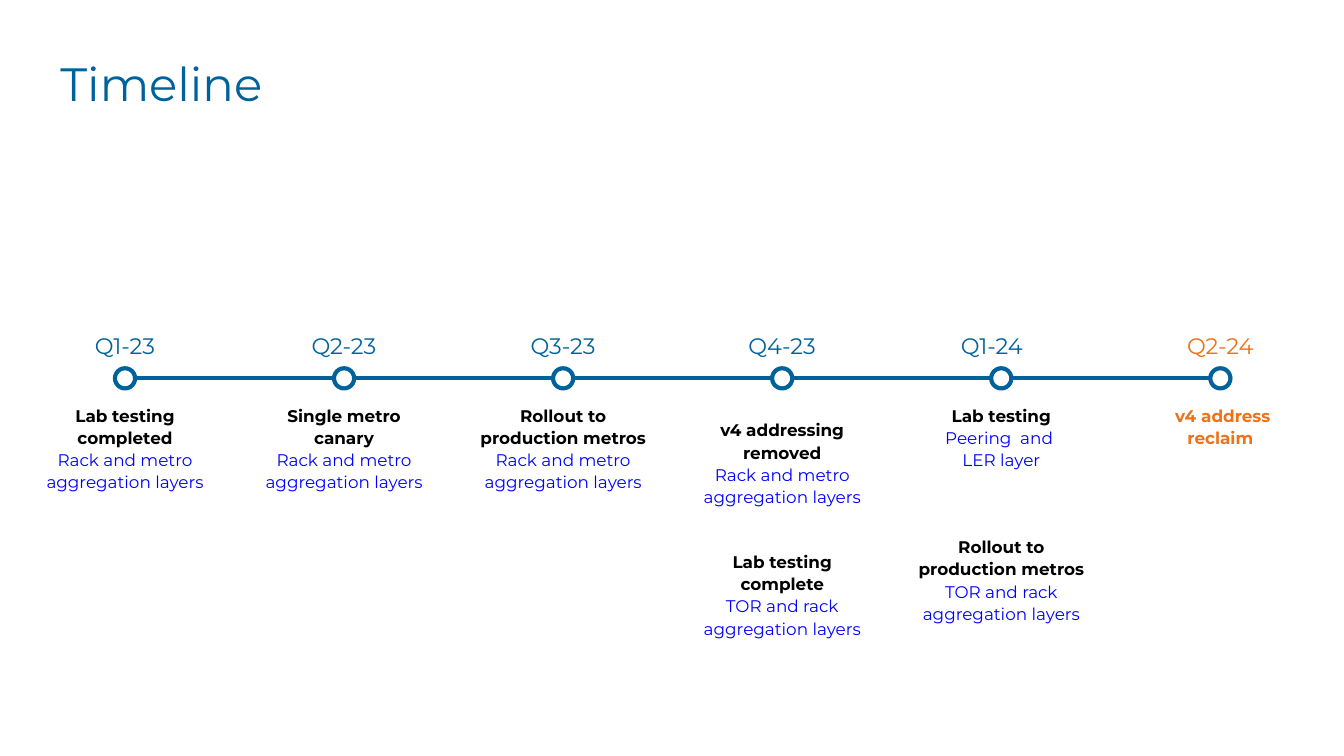
from lxml import etree
from pptx import Presentation
from pptx import util as u
from pptx.dml.color import RGBColor
from pptx.enum import shapes, text
from pptx.oxml.ns import qn

COLORS = {
    "blue": "00629A",
    "orange": "ED7218",
    "black": "000000",
    "link": "0000FF",
    "white": "FFFFFF",
}
SLIDE_WIDTH = 10
SLIDE_HEIGHT = SLIDE_WIDTH * 9 / 16
FIRST_CENTER, STEP = 0.93, 1.63
DOT_SIZE, DOT_TOP = 0.15, 2.74
AXIS_Y = DOT_TOP + DOT_SIZE / 2
DETAIL_TOP = 3
RACK_METRO = ["Rack and metro aggregation layers"]
TOR_RACK = ["TOR and rack aggregation layers"]

# Quarter, label shift, color, then entries of (top, heading, detail lines)
QUARTERS = [
    ("Q1-23", 0, "blue", [(DETAIL_TOP, "Lab testing completed", RACK_METRO)]),
    ("Q2-23", 0, "blue", [(DETAIL_TOP, "Single metro canary", RACK_METRO)]),
    ("Q3-23", 0, "blue", [(DETAIL_TOP, "Rollout to production metros", RACK_METRO)]),
    ("Q4-23", 0, "blue", [(3.11, "v4 addressing removed", RACK_METRO),
                          (4.09, "Lab testing complete", TOR_RACK)]),
    ("Q1-24", -0.07, "blue", [(DETAIL_TOP, "Lab testing", ["Peering  and ", "LER layer"]),
                              (3.98, "Rollout to production metros", TOR_RACK)]),
    ("Q2-24", 0, "orange", [(DETAIL_TOP, " v4 address reclaim", [])]),
]


class TimelineSlide:
    font = "Montserrat"
    line_width = u.Pt(2.25)

    def __init__(self, slide):
        self.slide = slide

    def color(self, name):
        return RGBColor.from_string(COLORS[name])

    def text(self, left, top, width, height, lines, size, spacing=1.1,
             align=text.PP_ALIGN.CENTER, anchor=text.MSO_ANCHOR.TOP):
        """Add one paragraph for each (wording, color, bold) in lines."""
        box = self.slide.shapes.add_textbox(*map(u.Inches, (left, top, width, height)))
        frame = box.text_frame
        frame.word_wrap = True
        frame.vertical_anchor = anchor
        frame.margin_left = frame.margin_right = 0
        frame.margin_top = frame.margin_bottom = 0
        frame.text = "\n".join(wording for wording, _, _ in lines)
        for paragraph, (_, color, bold) in zip(frame.paragraphs, lines):
            paragraph.alignment = align
            paragraph.line_spacing = spacing
            font = paragraph.runs[0].font
            font.name, font.size, font.bold = self.font, u.Pt(size), bold
            font.color.rgb = self.color(color)

    def axis(self, start, end, y):
        line = self.slide.shapes.add_connector(
            shapes.MSO_CONNECTOR.STRAIGHT, *map(u.Inches, (start, y, end, y)))
        line.line.color.rgb = self.color("blue")
        line.line.width = self.line_width
        etree.SubElement(line._element.spPr, qn("a:effectLst"))

    def milestone(self, center):
        dot = self.slide.shapes.add_shape(
            shapes.MSO_SHAPE.OVAL,
            *map(u.Inches, (center - DOT_SIZE / 2, DOT_TOP, DOT_SIZE, DOT_SIZE)))
        dot.shadow.inherit = False
        dot.fill.solid()
        dot.fill.fore_color.rgb = self.color("white")
        dot.line.color.rgb = self.color("blue")
        dot.line.width = self.line_width

    def quarter(self, center, label, color):
        self.text(center - 0.75, 2.4, 1.5, 0.3, [(label, color, False)], 12,
                  spacing=1.2, anchor=text.MSO_ANCHOR.MIDDLE)

    def entry(self, center, top, heading, color, details):
        lines = [(heading, color, True)]
        lines += [(detail, "link", False) for detail in details]
        self.text(center - 0.615, top, 1.23, 0.69, lines, 9)


def main():
    deck = Presentation()
    deck.slide_width, deck.slide_height = map(u.Inches, (SLIDE_WIDTH, SLIDE_HEIGHT))
    timeline = TimelineSlide(deck.slides.add_slide(deck.slide_layouts[6]))

    timeline.text(0.45, 0.37, 9.09, 0.45, [("Timeline", "blue", False)], 25,
                  align=text.PP_ALIGN.LEFT)
    timeline.axis(0.85, 9.15, AXIS_Y)
    for index, (label, shift, color, entries) in enumerate(QUARTERS):
        center = FIRST_CENTER + index * STEP
        timeline.milestone(center)
        timeline.quarter(center + shift, label, color)
        heading_color = "black" if color == "blue" else color
        for top, heading, details in entries:
            timeline.entry(center, top, heading, heading_color, details)

    deck.save("out.pptx")


if __name__ == "__main__":
    main()
